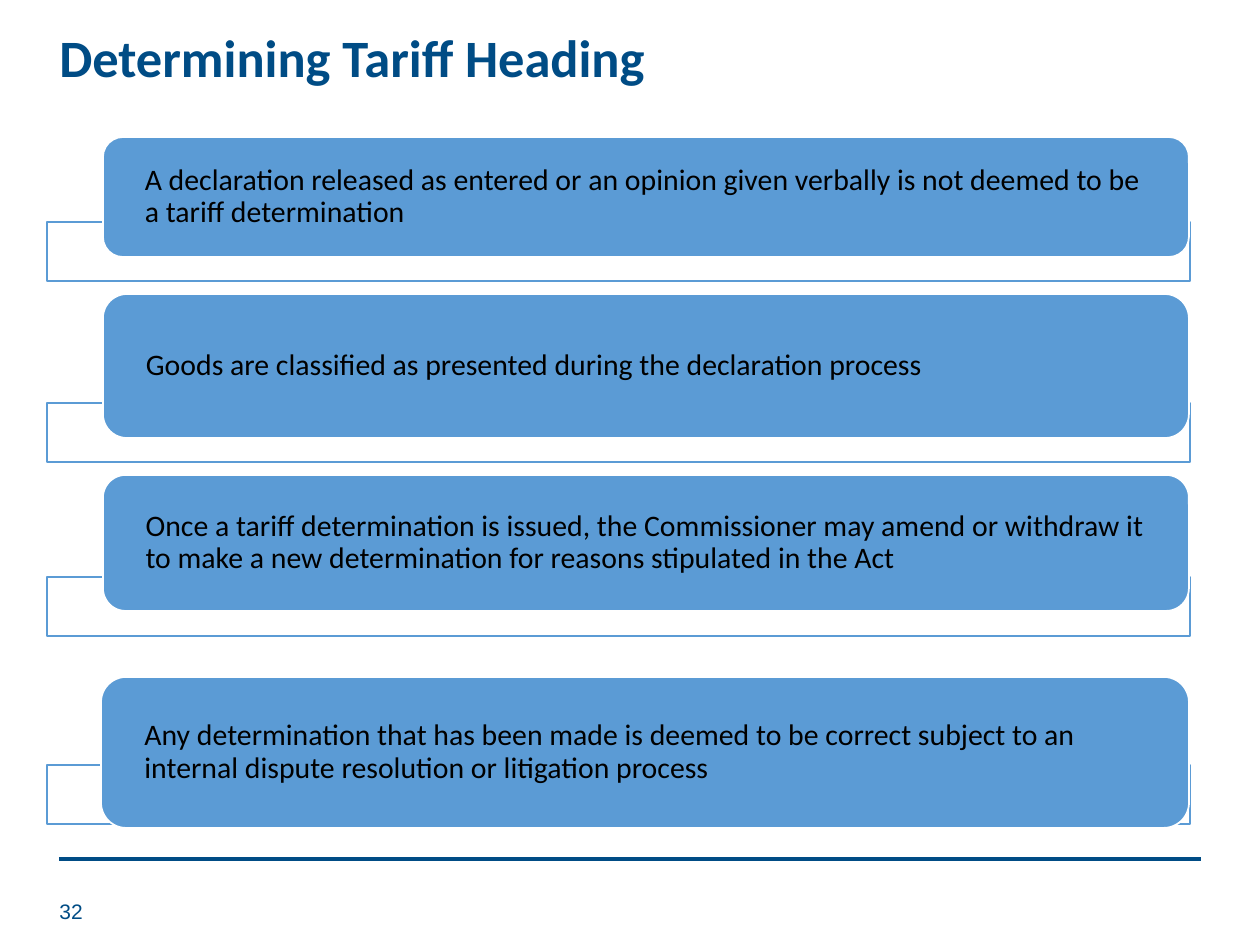
from dataclasses import dataclass

from lxml import etree
from pptx import Presentation
from pptx.dml.color import RGBColor
from pptx.enum.shapes import MSO_CONNECTOR as Connector, MSO_SHAPE as Shape
from pptx.enum.text import MSO_ANCHOR as Anchor, PP_ALIGN as Align
from pptx.oxml.ns import qn
from pptx.util import Emu, Pt

EMU_PER_PX = 914400 / 126


@dataclass(frozen=True)
class Theme:
    navy: str = "004C85"
    blue: str = "5B9BD5"
    white: str = "FFFFFF"
    black: str = "000000"
    heading_font: str = "Calibri"
    number_font: str = "Arial"
    title_size: int = 30
    body_size: int = 17
    number_size: int = 12


THEME = Theme()
FRAME_LEFT, FRAME_WIDTH, FRAME_HEIGHT = 47, 1143, 59
CARD_RIGHT, CARD_INSET = 1189, 36

# Card left, top and height, frame top, statement
STATEMENTS = [
    (103, 137, 120, 222, "A declaration released as entered or an opinion given "
     "verbally is not deemed to be a tariff determination"),
    (103, 294, 144, 403, "Goods are classified as presented during the "
     "declaration process"),
    (103, 475, 136, 577, "Once a tariff determination is issued, the Commissioner "
     "may amend or withdraw it to make a new determination for reasons "
     "stipulated in the Act"),
    (101, 677, 151, 765, "Any determination that has been made is deemed to be "
     "correct subject to an internal dispute resolution or litigation process"),
]


def px(length):
    return Emu(round(length * EMU_PER_PX))


def color(value):
    return RGBColor.from_string(value)


def set_text(box, text, font, size, fill, bold=False, spacing=None):
    frame = box.text_frame
    frame.word_wrap = True
    frame.vertical_anchor = Anchor.MIDDLE
    frame.text = text
    para = frame.paragraphs[0]
    para.alignment = Align.LEFT
    para.line_spacing = spacing
    span = para.runs[0].font
    span.name, span.size, span.bold = font, Pt(size), bold
    span.color.rgb = color(fill)


def add_text(page, left, top, width, height, *style, **options):
    box = page.shapes.add_textbox(px(left), px(top), px(width), px(height))
    set_text(box, *style, **options)


def add_panel(page, kind, left, top, width, height, fill, line):
    panel = page.shapes.add_shape(kind, px(left), px(top), px(width), px(height))
    panel.shadow.inherit = False
    panel.fill.solid()
    panel.fill.fore_color.rgb = color(fill)
    panel.line.color.rgb = color(line)
    panel.line.width = Pt(1)
    return panel


def add_frame(page, top):
    frame = add_panel(page, Shape.RECTANGLE, FRAME_LEFT, top, FRAME_WIDTH,
                      FRAME_HEIGHT, THEME.white, THEME.blue)
    fill = frame.element.spPr.find(qn("a:solidFill"))
    etree.SubElement(fill[0], qn("a:alpha"), val="90000")


def add_card(page, left, top, height, text):
    card = add_panel(page, Shape.ROUNDED_RECTANGLE, left, top, CARD_RIGHT - left,
                     height, THEME.blue, THEME.white)
    frame = card.text_frame
    frame.margin_left = frame.margin_right = px(CARD_INSET)
    frame.margin_top = frame.margin_bottom = 0
    set_text(card, text, THEME.heading_font, THEME.body_size, THEME.black,
             spacing=0.9)


def add_rule(page, left, right, y):
    rule = page.shapes.add_connector(Connector.STRAIGHT, px(left), px(y),
                                     px(right), px(y))
    rule.line.color.rgb = color(THEME.navy)
    rule.line.width = Pt(2)
    etree.SubElement(rule.element.spPr, qn("a:effectLst"))


def main():
    deck = Presentation()
    deck.slide_width, deck.slide_height = px(1260), px(945)
    page = deck.slides.add_slide(deck.slide_layouts[6])

    # Footer rule and title
    add_rule(page, 59, 1201, 859)
    add_text(page, 47, 24, 1086, 73, "Determining Tariff Heading",
             THEME.heading_font, THEME.title_size, THEME.navy, bold=True,
             spacing=0.9)

    # Page number
    add_text(page, 47, 886, 58, 50, "32", THEME.number_font,
             THEME.number_size, THEME.navy)

    # Statement cards, each over its outlined frame
    for left, top, height, frame_top, text in STATEMENTS:
        add_frame(page, frame_top)
        add_card(page, left, top, height, text)

    deck.save("out.pptx")


if __name__ == "__main__":
    main()
